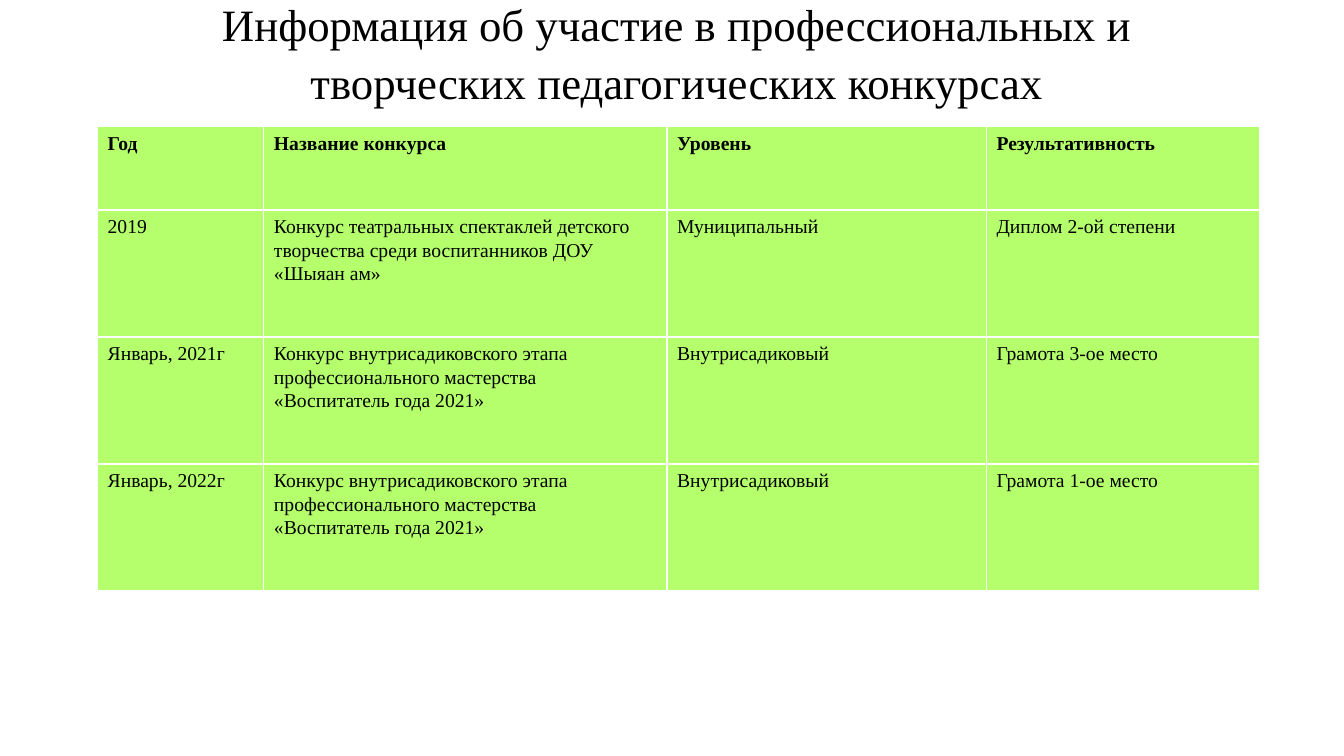
"""Build the slide listing professional and creative teaching contests."""
from dataclasses import dataclass

import pptx
import pptx.util
import pptx.dml.color
import pptx.enum.text
from pptx.util import Cm


@dataclass(frozen=True)
class Theme:
    font: str = "Times New Roman"
    ink: pptx.dml.color.RGBColor = pptx.dml.color.RGBColor(0, 0, 0)
    green: pptx.dml.color.RGBColor = pptx.dml.color.RGBColor(0xB5, 0xFF, 0x6C)
    heading_size: int = 32
    cell_size: int = 14
    line_spacing: float = 1.07


theme = Theme()


def style(paragraph, size, bold=False):
    paragraph.line_spacing = theme.line_spacing
    paragraph.font.name = theme.font
    paragraph.font.size = pptx.util.Pt(size)
    paragraph.font.bold = bold
    paragraph.font.color.rgb = theme.ink


contests = [
    ("Год", "Название конкурса", "Уровень", "Результативность"),
    ("2019",
     "Конкурс театральных спектаклей детского творчества среди воспитанников ДОУ «Шыяан ам»",
     "Муниципальный", "Диплом 2-ой степени"),
    ("Январь, 2021г",
     "Конкурс внутрисадиковского этапа профессионального мастерства «Воспитатель года 2021»",
     "Внутрисадиковый", "Грамота 3-ое место"),
    ("Январь, 2022г",
     "Конкурс внутрисадиковского этапа профессионального мастерства «Воспитатель года 2021»",
     "Внутрисадиковый", "Грамота 1-ое место"),
]
column_widths = [4.19, 10.16, 8.05, 6.88]
row_heights = [2.11, 3.2, 3.2, 3.2]

presentation = pptx.Presentation()
presentation.slide_width = Cm(33.87)
presentation.slide_height = Cm(19.05)
slide = presentation.slides.add_slide(presentation.slide_layouts[6])

heading = slide.shapes.add_textbox(Cm(2.67), Cm(1.57), Cm(28.78), Cm(2.36)).text_frame
heading.word_wrap = True
heading.vertical_anchor = pptx.enum.text.MSO_ANCHOR.BOTTOM
heading.margin_bottom = Cm(1.2)
heading.text = "Информация об участие в профессиональных и творческих педагогических конкурсах"
heading.paragraphs[0].alignment = pptx.enum.text.PP_ALIGN.CENTER
style(heading.paragraphs[0], theme.heading_size)

contest_table = slide.shapes.add_table(
    len(contests), len(column_widths), Cm(2.46), Cm(3.18),
    Cm(sum(column_widths)), Cm(sum(row_heights))).table
contest_table.horz_banding = False
for column, width in zip(contest_table.columns, column_widths):
    column.width = Cm(width)
for row_index, (row, height, contest) in enumerate(
        zip(contest_table.rows, row_heights, contests)):
    row.height = Cm(height)
    for cell, wording in zip(row.cells, contest):
        cell.text = wording
        cell.fill.solid()
        cell.fill.fore_color.rgb = theme.green
        style(cell.text_frame.paragraphs[0], theme.cell_size, bold=row_index == 0)

presentation.save("out.pptx")
